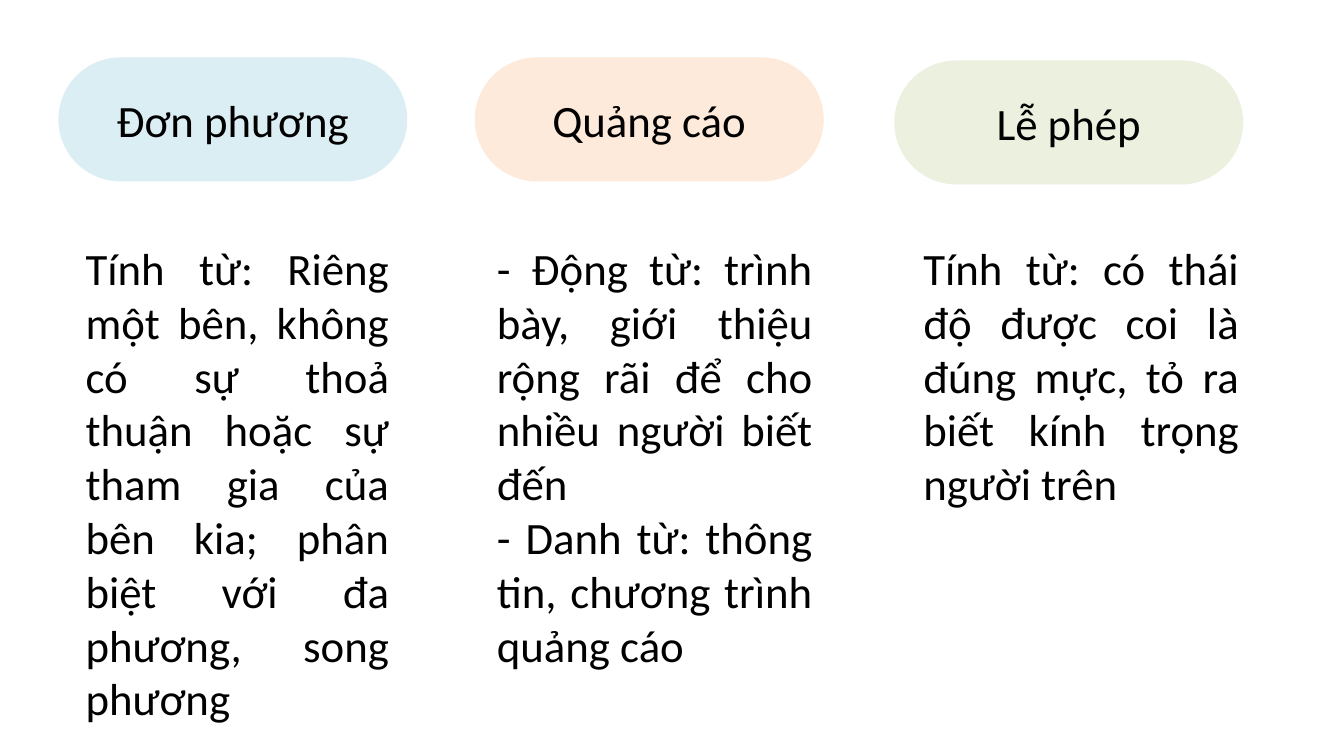
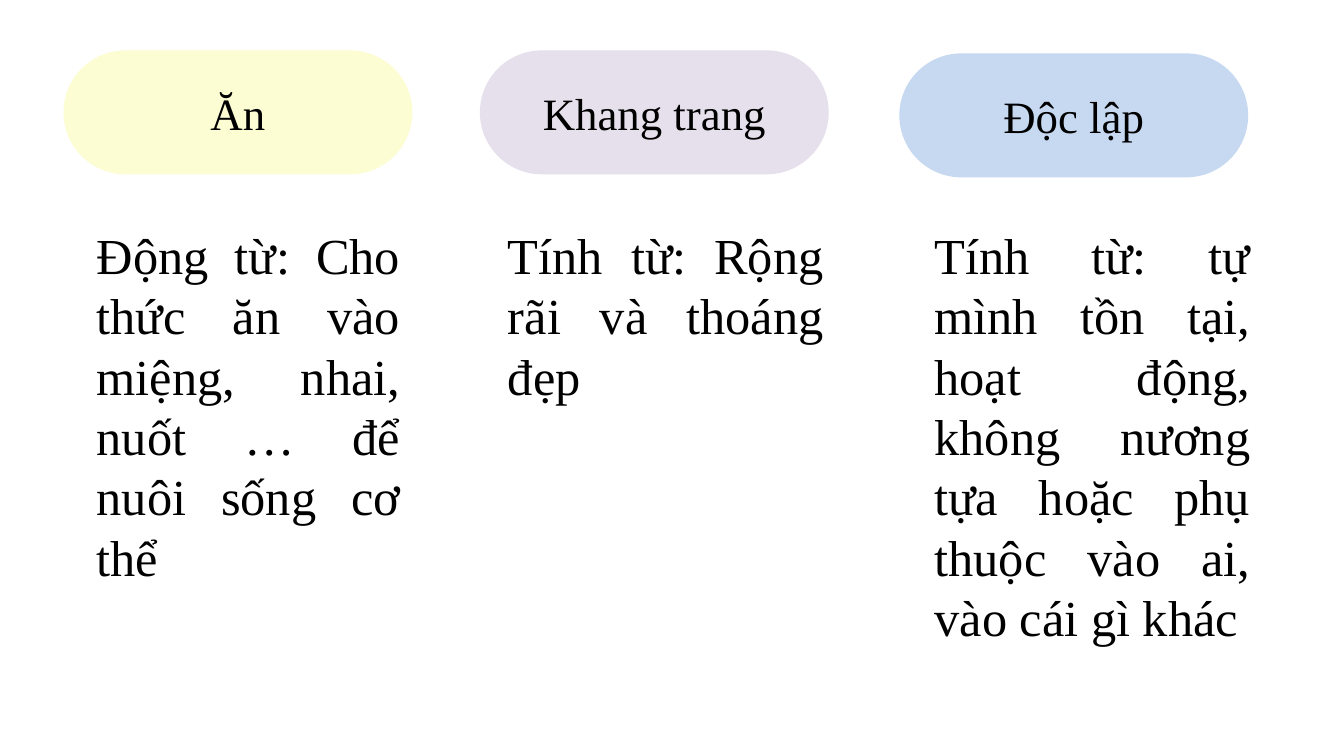
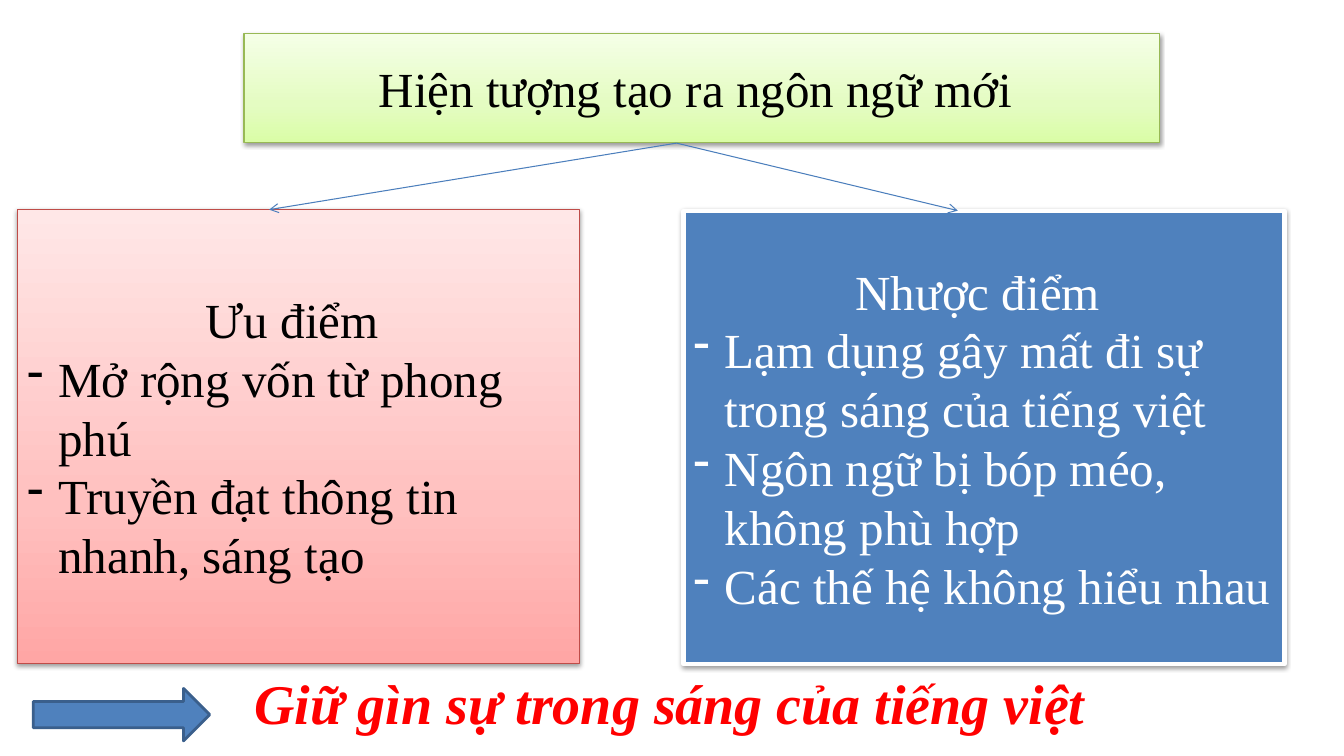
from lxml import etree
from pptx import Presentation
from pptx import util as u
from pptx.dml.color import RGBColor
from pptx.enum import shapes, text
from pptx.oxml.ns import qn

PX = 9144
SANS, SERIF = "Calibri", "Times New Roman"
BLACK, WHITE, RED, BLUE = "000000", "FFFFFF", "FF0000", "4F81BD"
CENTER, JUSTIFY, LEFT = text.PP_ALIGN.CENTER, text.PP_ALIGN.JUSTIFY, text.PP_ALIGN.LEFT

PILL_OFFSETS = [(0, 0), (413, 0), (829, 3)]
MEANING_OFFSETS = [(0, 321), (408, 333), (831, 333)]

GLOSSARIES = [
    dict(font=SANS, size=32, pills_at=(58, 57), meanings_at=(75, 234), words=[
        ("Đơn phương", "DBEEF4", 441, [
            "Tính từ: Riêng một bên, không có sự thoả thuận hoặc sự tham gia "
            "của bên kia; phân biệt với đa phương, song phương"]),
        ("Quảng cáo", "FDEADA", 441, [
            "- Động từ: trình bày, giới thiệu rộng rãi để cho nhiều người biết đến",
            "- Danh từ: thông tin, chương trình quảng cáo"]),
        ("Lễ phép", "EBF1DE", 279, [
            "Tính từ: có thái độ được coi là đúng mực, tỏ ra biết kính trọng người trên"]),
    ]),
    dict(font=SERIF, size=36, pills_at=(63, 50), meanings_at=(86, 217), words=[
        ("Ăn", "FCFDD3", 374, [
            "Động từ: Cho thức ăn vào miệng, nhai, nuốt … để nuôi sống cơ thể"]),
        ("Khang trang", "E6E0EC", 192, ["Tính từ: Rộng rãi và thoáng đẹp"]),
        ("Độc lập", "C6D9F1", 434, [
            "Tính từ: tự mình tồn tại, hoạt động, không nương tựa hoặc phụ thuộc "
            "vào ai, vào cái gì khác"]),
    ]),
]

PANELS = [
    dict(at=(242, 33, 908, 108), fill=["DAFDA7", "E4FCC2", "F5FFE7"], line=("98B955", 0.75),
         color=BLACK, heading="Hiện tượng tạo ra ngôn ngữ mới ", points=[]),
    dict(at=(17, 208, 558, 450), fill=["FFA6A5", "FFC0BF", "FFE7E7"], line=("BF4C48", 0.75),
         color=BLACK, heading="Ưu điểm ",
         points=["Mở rộng vốn từ phong phú", "Truyền đạt thông tin nhanh, sáng tạo"]),
    dict(at=(678, 209, 596, 450), fill=BLUE, line=(WHITE, 3), color=WHITE, heading="Nhược điểm ",
         points=["Lạm dụng gây mất đi sự trong sáng của tiếng việt",
                 "Ngôn ngữ bị bóp méo, không phù hợp",
                 "Các thế hệ không hiểu nhau"]),
]
BRANCH_START = (671, 142)
BRANCH_ENDS = [(267, 208), (950, 209)]
CONCLUSION = "Giữ gìn sự trong sáng của tiếng việt "


def emu(*lengths):
    return [u.Emu(length * PX) for length in lengths]


def rgb(value):
    return RGBColor.from_string(value)


def child(parent, tag, **attributes):
    return etree.SubElement(parent, qn(tag), {k: str(v) for k, v in attributes.items()})


def write(shape, lines, font=SERIF, size=35, color=BLACK, align=CENTER, bold=False,
          italic=False, dashes=()):
    frame = shape.text_frame
    frame.word_wrap = True
    for i, line in enumerate([*lines, *dashes]):
        paragraph = frame.paragraphs[0] if i == 0 else frame.add_paragraph()
        paragraph.alignment = align
        if i >= len(lines):
            paragraph.alignment = LEFT
            properties = paragraph._p.get_or_add_pPr()
            properties.set("marL", str(31 * PX))
            properties.set("indent", str(-31 * PX))
            child(properties, "a:buFontTx")
            child(properties, "a:buChar", char="-")
        run = paragraph.add_run()
        run.text = line
        run.font.name, run.font.size = font, u.Pt(size)
        run.font.color.rgb = rgb(color)
        run.font.bold, run.font.italic = bold, italic


def add_block(slide, kind, at, fill, line=None):
    block = slide.shapes.add_shape(kind, *emu(*at))
    block.shadow.inherit = False
    if isinstance(fill, str):
        block.fill.solid()
        block.fill.fore_color.rgb = rgb(fill)
    else:
        block.fill.gradient()
        block.fill.gradient_angle = 90
        stops = block._element.spPr.find(".//" + qn("a:gsLst"))
        for stop in list(stops):
            stops.remove(stop)
        for position, color in zip((0, 35, 100), fill):
            child(child(stops, "a:gs", pos=position * 1000), "a:srgbClr", val=color)
    if line:
        block.line.color.rgb = rgb(line[0])
        block.line.width = u.Pt(line[1])
    else:
        block.line.fill.background()
    block.text_frame.vertical_anchor = text.MSO_ANCHOR.MIDDLE
    return block


def add_shadow(block):
    effects = block._element.spPr.find(qn("a:effectLst"))
    shadow = child(effects, "a:outerShdw", blurRad=u.Pt(3.1), dist=u.Pt(1.6),
                   dir=5400000, rotWithShape=0)
    child(child(shadow, "a:srgbClr", val=BLACK), "a:alpha", val=38000)


def add_caption(slide, at, lines, **style):
    caption = slide.shapes.add_textbox(*emu(*at))
    write(caption, lines, **style)
    caption.text_frame.auto_size = text.MSO_AUTO_SIZE.SHAPE_TO_FIT_TEXT


def add_branch(slide, end):
    branch = slide.shapes.add_connector(shapes.MSO_CONNECTOR.STRAIGHT, *emu(*BRANCH_START, *end))
    branch.line.color.rgb = rgb("4B7EBC")
    branch.line.width = u.Pt(0.75)
    child(branch.line._get_or_add_ln(), "a:tailEnd", type="arrow")
    child(branch._element.spPr, "a:effectLst")


def build_glossary(slide, font, size, pills_at, meanings_at, words):
    for (word, fill, _, _), (dx, dy) in zip(words, PILL_OFFSETS):
        at = (pills_at[0] + dx, pills_at[1] + dy, 346, 123)
        pill = add_block(slide, shapes.MSO_SHAPE.ROUNDED_RECTANGLE, at, fill)
        pill.adjustments[0] = 0.5
        write(pill, [word], font=font, size=32)
    for (_, _, height, meaning), (dx, width) in zip(words, MEANING_OFFSETS):
        at = (meanings_at[0] + dx, meanings_at[1], width, height)
        add_caption(slide, at, meaning, font=font, size=size, align=JUSTIFY)


def build_debate(slide):
    for panel in PANELS:
        block = add_block(slide, shapes.MSO_SHAPE.RECTANGLE, panel["at"], panel["fill"], panel["line"])
        add_shadow(block)
        write(block, [panel["heading"]], color=panel["color"], dashes=panel["points"])
    add_caption(slide, (242, 658, 858, 77), [CONCLUSION], size=40, color=RED, bold=True, italic=True)
    add_block(slide, shapes.MSO_SHAPE.RIGHT_ARROW, (33, 683, 175, 52), BLUE, ("3A5F8C", 2))
    for end in BRANCH_ENDS:
        add_branch(slide, end)


def main():
    deck = Presentation()
    deck.slide_width, deck.slide_height = emu(1333, 750)
    blank = deck.slide_layouts[6]
    for glossary in GLOSSARIES:
        build_glossary(deck.slides.add_slide(blank), **glossary)
    build_debate(deck.slides.add_slide(blank))
    deck.save("out.pptx")


if __name__ == "__main__":
    main()
